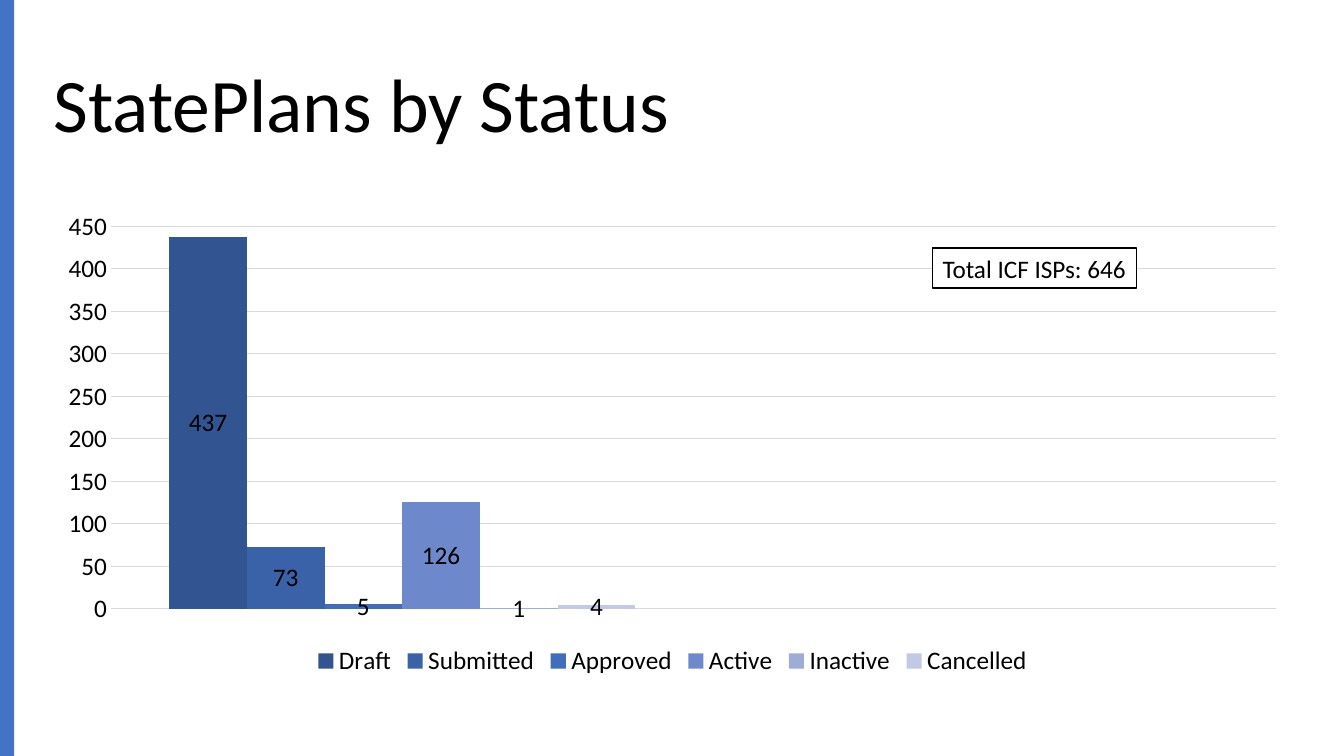
from pptx import Presentation
from pptx.chart.data import CategoryChartData
from pptx.dml.color import RGBColor
from pptx.enum.chart import XL_CHART_TYPE as ChartType
from pptx.enum.chart import XL_LABEL_POSITION as LabelPosition
from pptx.enum.chart import XL_LEGEND_POSITION as LegendPosition
from pptx.enum.chart import XL_TICK_MARK as TickMark
from pptx.enum.shapes import MSO_SHAPE as ShapeType
from pptx.enum.text import MSO_ANCHOR as Anchor
from pptx.enum.text import MSO_AUTO_SIZE as AutoSize
from pptx.enum.text import PP_ALIGN as Align
from pptx.util import Emu, Pt

# Content
TITLE = "StatePlans by Status"
TOTAL = "Total ICF ISPs: 646"
CATEGORIES = ["1", "2"]
STATUSES = [
    ("Draft", 437, "325491"),
    ("Submitted", 73, "3A62A8"),
    ("Approved", 5, "416DBB"),
    ("Active", 126, "6D89CB"),
    ("Inactive", 1, "9EADD8"),
    ("Cancelled", 4, "C1C9E4"),
]

# Layout in px, 100 px to the inch
EMU_PER_PX = 9144
WIDTH, HEIGHT = 1333, 750
LEFT, CONTENT_WIDTH = 43, 1248
TITLE_BOX = (LEFT, 35, CONTENT_WIDTH, 145)
CHART_BOX = (LEFT, 200, CONTENT_WIDTH, 476)
STRIPE_BOX = (0, 0, 14, HEIGHT)
TOTAL_BOX = (925, 246, 202, 40)

TITLE_FONT = {"name": "Calibri", "size": Pt(54), "bold": False}
BODY_FONT = {"name": "Calibri", "size": Pt(18), "bold": False}


def px(value):
    return Emu(value * EMU_PER_PX)


def box(values):
    return [px(value) for value in values]


def color(hex_string):
    return RGBColor.from_string(hex_string)


def set_attributes(target, values):
    for name, value in values.items():
        setattr(target, name, value)


def format_font(font, values):
    set_attributes(font, values)
    font.color.rgb = color("000000")


def add_rectangle(slide, place, fill):
    shape = slide.shapes.add_shape(ShapeType.RECTANGLE, *box(place))
    shape.shadow.inherit = False
    shape.fill.solid()
    shape.fill.fore_color.rgb = color(fill)
    shape.line.fill.background()
    return shape


def add_title(slide):
    title = slide.shapes.title
    names = ("left", "top", "width", "height")
    set_attributes(title, dict(zip(names, box(TITLE_BOX))))
    frame = title.text_frame
    frame.text = TITLE
    set_attributes(frame, {"vertical_anchor": Anchor.MIDDLE, "word_wrap": True,
                           "auto_size": AutoSize.NONE})
    paragraph = frame.paragraphs[0]
    set_attributes(paragraph, {"alignment": Align.LEFT, "line_spacing": 0.9})
    format_font(paragraph.runs[0].font, TITLE_FONT)


def add_status_chart(slide):
    data = CategoryChartData()
    data.categories = CATEGORIES
    for name, value, _ in STATUSES:
        data.add_series(name, [value, None])
    chart = slide.shapes.add_chart(
        ChartType.COLUMN_CLUSTERED, *box(CHART_BOX), data).chart
    set_attributes(chart, {"has_title": False, "has_legend": True})
    format_font(chart.font, BODY_FONT)

    # Legend
    set_attributes(chart.legend, {"position": LegendPosition.BOTTOM,
                                  "include_in_layout": False})
    format_font(chart.legend.font, BODY_FONT)

    # Axes
    chart.category_axis.visible = False
    axis = chart.value_axis
    set_attributes(axis, {"minimum_scale": 0, "maximum_scale": 450, "major_unit": 50,
                          "major_tick_mark": TickMark.NONE,
                          "minor_tick_mark": TickMark.NONE})
    axis.format.line.fill.background()
    format_font(axis.tick_labels.font, BODY_FONT)
    grid_line = axis.major_gridlines.format.line
    grid_line.color.rgb = color("D9D9D9")
    grid_line.width = Pt(0.75)

    # Columns
    plot = chart.plots[0]
    set_attributes(plot, {"gap_width": 150, "overlap": 0, "vary_by_categories": False})
    for series, (_, _, fill) in zip(plot.series, STATUSES):
        series.format.fill.solid()
        series.format.fill.fore_color.rgb = color(fill)
        labels = series.data_labels
        set_attributes(labels, {"show_value": True, "position": LabelPosition.CENTER})
        format_font(labels.font, BODY_FONT)


def add_total(slide):
    shape = add_rectangle(slide, TOTAL_BOX, "FFFFFF")
    shape.line.color.rgb = color("000000")
    shape.line.width = Pt(1)
    frame = shape.text_frame
    frame.text = TOTAL
    set_attributes(frame, {"word_wrap": False, "vertical_anchor": Anchor.TOP,
                           "auto_size": AutoSize.SHAPE_TO_FIT_TEXT})
    paragraph = frame.paragraphs[0]
    paragraph.alignment = Align.LEFT
    format_font(paragraph.runs[0].font, BODY_FONT)


def main():
    presentation = Presentation()
    set_attributes(presentation, {"slide_width": px(WIDTH), "slide_height": px(HEIGHT)})
    slide = presentation.slides.add_slide(presentation.slide_layouts[5])
    add_title(slide)
    add_rectangle(slide, STRIPE_BOX, "4472C4")
    add_status_chart(slide)
    add_total(slide)
    presentation.save("out.pptx")


if __name__ == "__main__":
    main()
